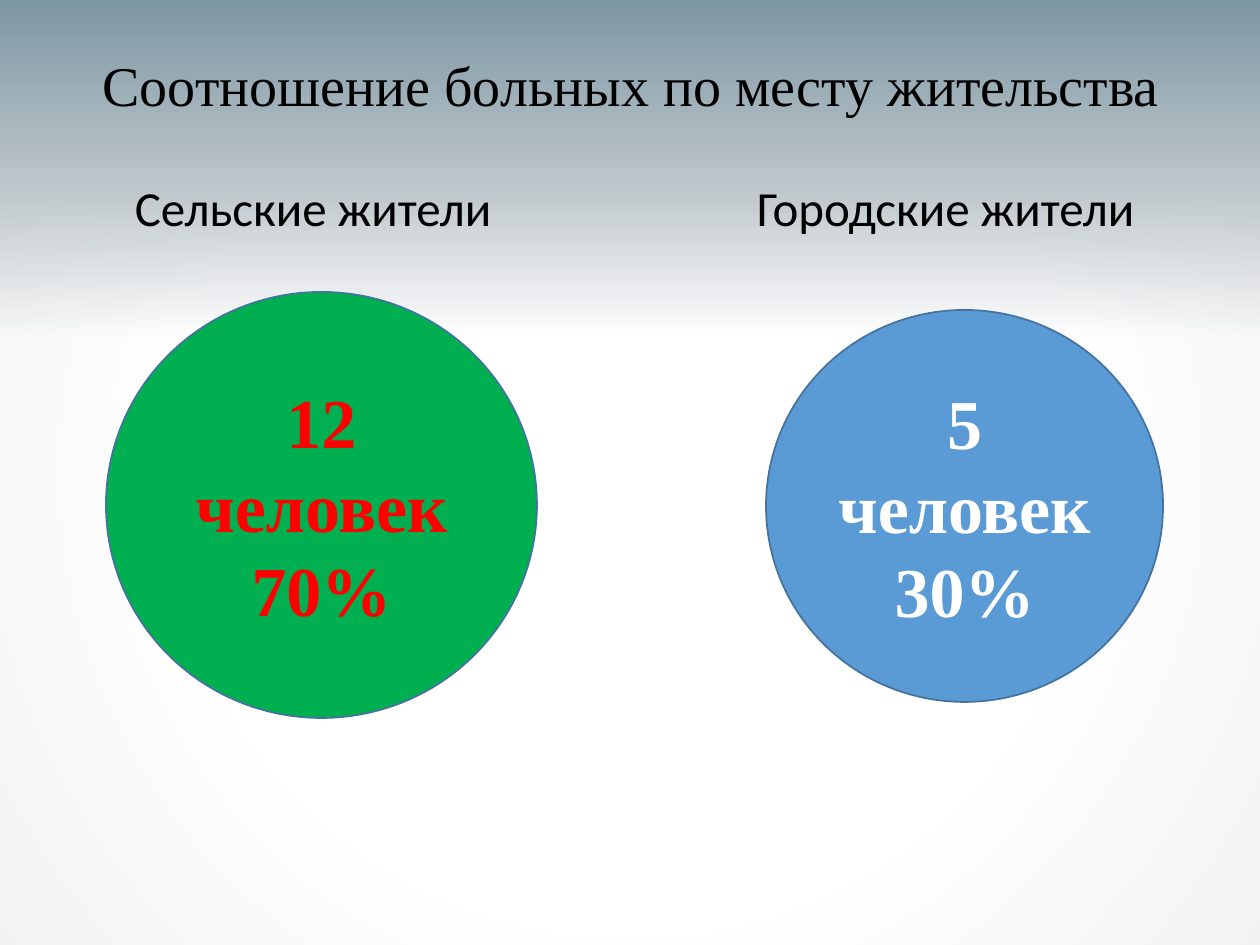
"""Builds the slide comparing rural and urban patients."""
from pptx import Presentation
from pptx import util as u
from pptx.dml.color import RGBColor
from pptx.enum import shapes, text
from pptx.oxml import parse_xml
from pptx.oxml.ns import nsdecls, qn

C = {"white": "FFFFFF", "edge": "F2F2F2", "slate": "7C96A3", "mist": "C1C9CD",
     "black": "000000", "green": "00B050", "blue": "5B9BD5",
     "outline": "43739E", "red": "FF0000"}
SERIF, SANS = "Times New Roman", "Calibri"
W, H = 1260, 945
TITLE = "Соотношение больных по месту жительства"
HEADINGS = ["Сельские жители", "Городские жители"]
HEADING_TAB = 622
CIRCLES = [
    (["12 человек", "70%"], (106, 292, 431, 426), "green", "red"),
    (["5 человек", "30%"], (766, 310, 397, 392), "blue", "white"),
]
RADIAL = ('<a:path path="circle"><a:fillToRect l="50000" t="50000" '
          'r="50000" b="50000"/></a:path>')
DOWNWARD = '<a:lin ang="5400000" scaled="0"/>'
BACKDROPS = [
    ((0, 0, W, H), [(0, "white", 0), (58, "white", 100), (100, "edge", 100)], RADIAL),
    ((0, 0, W, 336), [(0, "slate", 100), (58, "mist", 100), (100, "mist", 0)], DOWNWARD),
]


def px(n):
    return u.Emu(round(n * 914400 / 126))


def rgb(name):
    return RGBColor.from_string(C[name])


def write(s, lines, *, size, font, color, bold=False, align=text.PP_ALIGN.CENTER,
          anchor=text.MSO_ANCHOR.MIDDLE, spacing=None, before=None):
    tf = s.text_frame
    tf.word_wrap = True
    tf.vertical_anchor = anchor
    for i, line in enumerate(lines):
        p = tf.add_paragraph() if i else tf.paragraphs[0]
        p.alignment, p.line_spacing, p.space_before = align, spacing, before
        r = p.add_run()
        r.text = line
        r.font.size, r.font.name, r.font.bold = u.Pt(size), font, bold
        r.font.color.rgb = rgb(color)


def add_shape(slide, kind, box):
    s = slide.shapes.add_shape(kind, *map(px, box))
    s.shadow.inherit = False
    return s


def add_backdrop(slide, box, stops, direction):
    s = add_shape(slide, shapes.MSO_SHAPE.RECTANGLE, box)
    s.line.fill.background()
    s.fill.background()
    gs = "".join(
        f'<a:gs pos="{pos * 1000}"><a:srgbClr val="{C[name]}">'
        f'<a:alpha val="{alpha * 1000}"/></a:srgbClr></a:gs>'
        for pos, name, alpha in stops)
    grad = parse_xml(f'<a:gradFill {nsdecls("a")} rotWithShape="1">'
                     f'<a:gsLst>{gs}</a:gsLst>{direction}</a:gradFill>')
    sp_pr = s._element.spPr
    sp_pr.replace(sp_pr.find(qn("a:noFill")), grad)


def add_headings(slide):
    s = slide.shapes.add_textbox(*map(px, (89, 178, 1085, 674)))
    s.text_frame.margin_left = px(46)
    write(s, ["\t".join(HEADINGS)], size=28, font=SANS, color="black",
          align=text.PP_ALIGN.LEFT, anchor=text.MSO_ANCHOR.TOP,
          spacing=0.9, before=u.Pt(10))
    tabs = parse_xml(f'<a:tabLst {nsdecls("a")}>'
                     f'<a:tab pos="{px(HEADING_TAB)}" algn="l"/></a:tabLst>')
    s.text_frame.paragraphs[0]._p.get_or_add_pPr().append(tabs)


def main():
    prs = Presentation()
    prs.slide_width, prs.slide_height = px(W), px(H)
    slide = prs.slides.add_slide(prs.slide_layouts[6])
    for backdrop in BACKDROPS:
        add_backdrop(slide, *backdrop)
    title = slide.shapes.add_textbox(*map(px, (89, 20, 1085, 137)))
    write(title, [TITLE], size=32, font=SERIF, color="black", spacing=0.9)
    add_headings(slide)
    for lines, box, fill, color in CIRCLES:
        s = add_shape(slide, shapes.MSO_SHAPE.OVAL, box)
        s.fill.solid()
        s.fill.fore_color.rgb = rgb(fill)
        s.line.color.rgb = rgb("outline")
        s.line.width = u.Pt(1)
        write(s, lines, size=40, font=SERIF, color=color, bold=True)
    prs.save("out.pptx")


if __name__ == "__main__":
    main()
